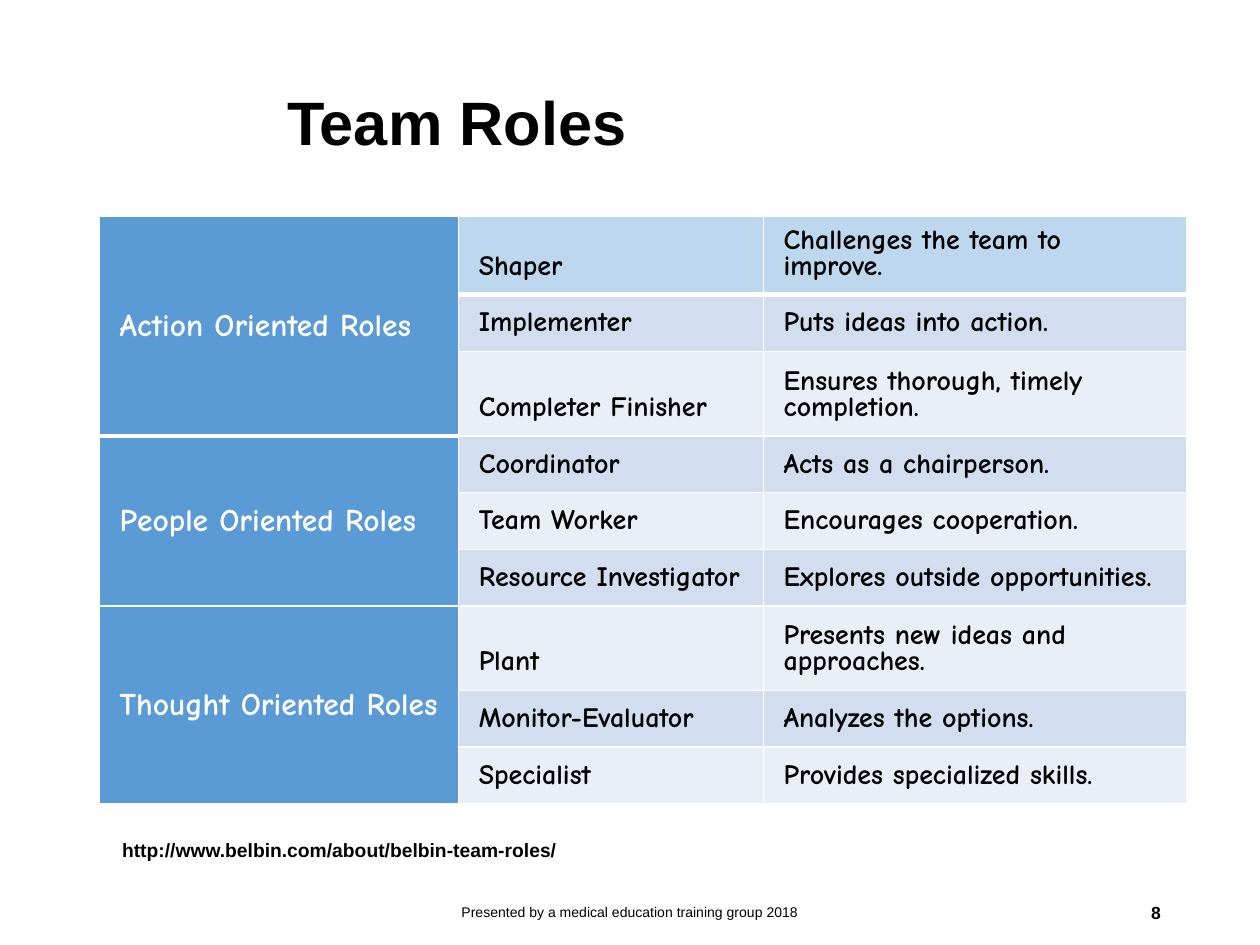
import pptx
import pptx.dml.color
import pptx.enum.text
import pptx.oxml
import pptx.oxml.ns
import pptx.util
from pptx.util import Inches

COLORS = {
    "text": "000000",
    "white": "FFFFFF",
    "group": "5B9BD5",
    "first": "BDD7EE",
    "odd": "D2DEEF",
    "even": "EAEFF7",
}
ALIGN = pptx.enum.text.PP_ALIGN
ANCHOR = pptx.enum.text.MSO_ANCHOR

GROUPS = [
    ("Action Oriented Roles", [
        ("Shaper", "Challenges the team to improve."),
        ("Implementer", "Puts ideas into action."),
        ("Completer Finisher", "Ensures thorough, timely completion."),
    ]),
    ("People Oriented Roles", [
        ("Coordinator", "Acts as a chairperson."),
        ("Team Worker", "Encourages cooperation."),
        ("Resource Investigator", "Explores outside opportunities."),
    ]),
    ("Thought Oriented Roles", [
        ("Plant", "Presents new ideas and approaches."),
        ("Monitor-Evaluator", "Analyzes the options."),
        ("Specialist", "Provides specialized skills."),
    ]),
]
COLUMN_WIDTHS = [2.85, 2.42, 3.36]
ROW_HEIGHTS = [0.62, 0.45, 0.67, 0.45, 0.45, 0.45, 0.67, 0.45, 0.45]


def write(frame, text, font, size, color, bold):
    """Fill a text frame with one formatted paragraph and return it."""
    frame.word_wrap = True
    frame.text = text
    para = frame.paragraphs[0]
    span = para.runs[0]
    span.font.name = font
    span.font.size = pptx.util.Pt(size)
    span.font.bold = bold
    span.font.color.rgb = pptx.dml.color.RGBColor.from_string(COLORS[color])
    return para


def style_cell(cell, fill, padding, bottom_width):
    """Set white borders, a solid fill and the cell margins."""
    properties = cell._tc.get_or_add_tcPr()
    for side, width in (("L", 1), ("R", 1), ("T", 1), ("B", bottom_width)):
        properties.append(pptx.oxml.parse_xml(
            f'<a:ln{side} {pptx.oxml.ns.nsdecls("a")} w="{pptx.util.Pt(width)}">'
            f'<a:solidFill><a:srgbClr val="{COLORS["white"]}"/></a:solidFill>'
            f'</a:ln{side}>'))
    cell.fill.solid()
    cell.fill.fore_color.rgb = pptx.dml.color.RGBColor.from_string(COLORS[fill])
    cell.margin_left = cell.margin_right = Inches(0.16)
    cell.margin_top = cell.margin_bottom = Inches(padding)


deck = pptx.Presentation()
deck.slide_width = Inches(10)
deck.slide_height = Inches(7.5)
page = deck.slides.add_slide(deck.slide_layouts[6])

# Title, footer, page number and web address
for text, place, size, bold, align, anchor in [
    ("Team Roles", (2.18, 0.27, 7.14, 1.45), 35, True, ALIGN.LEFT, ANCHOR.MIDDLE),
    ("Presented by a medical education training group 2018",
     (3.31, 7.04, 3.38, 0.4), 8, False, ALIGN.CENTER, ANCHOR.MIDDLE),
    ("8", (7.06, 7.04, 2.25, 0.4), 10, True, ALIGN.RIGHT, ANCHOR.MIDDLE),
    ("http://www.belbin.com/about/belbin-team-roles/",
     (0.87, 6.6, 7.31, 0.62), 11, True, ALIGN.LEFT, ANCHOR.TOP),
]:
    box = page.shapes.add_textbox(*map(Inches, place))
    box.text_frame.vertical_anchor = anchor
    para = write(box.text_frame, text, "Arial", size, "text", bold)
    para.alignment = align
    para.line_spacing = 0.9 if text == "Team Roles" else 1.0

# Table of roles
table = page.shapes.add_table(
    len(ROW_HEIGHTS), len(COLUMN_WIDTHS), Inches(0.79), Inches(1.72),
    Inches(sum(COLUMN_WIDTHS)), Inches(sum(ROW_HEIGHTS))).table
table.first_row = False
table.horz_banding = False
for column, width in zip(table.columns, COLUMN_WIDTHS):
    column.width = Inches(width)
for row, height in zip(table.rows, ROW_HEIGHTS):
    row.height = Inches(height)

row_index = 0
for group, roles in GROUPS:
    first_row = row_index
    group_border = 3 if first_row == 0 else 1
    for role in roles:
        style_cell(table.cell(row_index, 0), "group", 0.16, group_border)
        if row_index == 0:
            fill = "first"
        else:
            fill = "odd" if row_index % 2 else "even"
        for column_index, text in enumerate(role, start=1):
            cell = table.cell(row_index, column_index)
            style_cell(cell, fill, 0.1, 3 if row_index == 0 else 1)
            cell.vertical_anchor = ANCHOR.BOTTOM
            para = write(cell.text_frame, text, "Comic Neue", 16, "text", True)
            para.line_spacing = pptx.util.Pt(15)
        row_index += 1
    group_cell = table.cell(first_row, 0)
    group_cell.merge(table.cell(row_index - 1, 0))
    group_cell.vertical_anchor = ANCHOR.MIDDLE
    write(group_cell.text_frame, group, "Comic Neue", 18, "white", True)

deck.save("out.pptx")
